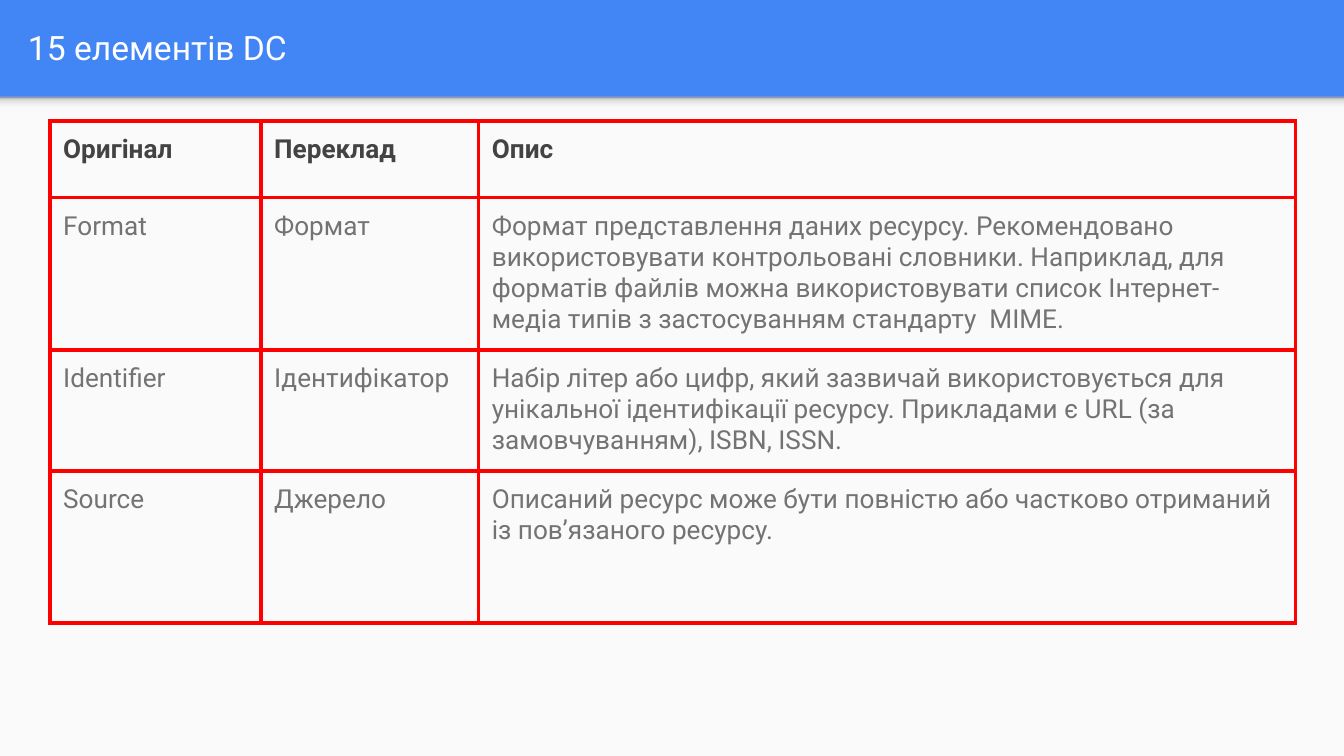
from dataclasses import dataclass

from lxml import etree
from pptx import Presentation
from pptx import util as u
from pptx.dml.color import RGBColor
from pptx.enum import shapes, text
from pptx.oxml import ns


@dataclass(frozen=True)
class Theme:
    font: str = "Roboto"
    title_size: float = 18
    body_size: float = 14
    border_width: float = 2.25
    inset: float = 0.1
    header: str = "4285F4"
    page: str = "FAFAFA"
    title: str = "FFFFFF"
    heading: str = "434343"
    body: str = "737373"
    border: str = "FF0000"
    shade: tuple = ((0, "F9F9F9"), (36, "F9F9F9"), (80, "DEDEDE"), (100, "999999"))


THEME = Theme()
WIDTH = 10
HEIGHT = WIDTH * 9 / 16
HEADER_HEIGHT = 0.72
SHADE_HEIGHT = 0.12
TABLE_LEFT, TABLE_TOP = 0.37, 0.9
COLUMNS = (1.57, 1.62, 6.08)
ROWS = (0.57, 1.1, 0.88, 1.13)

ELEMENTS = (
    ("Оригінал", "Переклад", "Опис"),
    ("Format", "Формат",
     "Формат представлення даних ресурсу. Рекомендовано використовувати "
     "контрольовані словники. Наприклад, для форматів файлів можна "
     "використовувати список Інтернет-медіа типів з застосуванням "
     "стандарту  MIME."),
    ("Identifier", "Ідентифікатор",
     "Набір літер або цифр, який зазвичай використовується для унікальної "
     "ідентифікації ресурсу. Прикладами є URL (за замовчуванням), ISBN, ISSN."),
    ("Source", "Джерело",
     "Описаний ресурс може бути повністю або частково отриманий "
     "із пов’язаного ресурсу."),
)


def inches(*lengths):
    return [u.Inches(length) for length in lengths]


def add_rect(slide, top, height):
    """Add a full-width rectangle without line or shadow."""
    sp = slide.shapes.add_shape(
        shapes.MSO_SHAPE.RECTANGLE, *inches(0, top, WIDTH, height))
    sp.shadow.inherit = False
    sp.line.fill.background()
    return sp


def add_page(slide):
    sp = add_rect(slide, HEADER_HEIGHT, HEIGHT - HEADER_HEIGHT)
    sp.fill.solid()
    sp.fill.fore_color.rgb = RGBColor.from_string(THEME.page)


def add_header_shade(slide):
    """Add the strip that fades downwards from the header's lower edge."""
    sp = add_rect(slide, HEADER_HEIGHT, SHADE_HEIGHT)
    sp.fill.gradient()
    sp.fill.gradient_angle = 90
    stops = next(sp._element.iter(ns.qn("a:gsLst")))
    for stop in list(stops):
        stops.remove(stop)
    for percent, color in THEME.shade:
        stop = etree.SubElement(stops, ns.qn("a:gs"), pos=str(percent * 1000))
        etree.SubElement(stop, ns.qn("a:srgbClr"), val=color)


def set_insets(frame):
    """Give a text frame or a table cell equal margins."""
    for side in ("left", "right", "top", "bottom"):
        setattr(frame, f"margin_{side}", u.Inches(THEME.inset))


def write(tf, words, size, color, bold=False):
    tf.word_wrap = True
    r = tf.paragraphs[0].add_run()
    r.text = words
    r.font.name = THEME.font
    r.font.size = u.Pt(size)
    r.font.bold = bold
    r.font.color.rgb = RGBColor.from_string(color)


def add_title(slide, words):
    tf = slide.shapes.add_textbox(*inches(0.11, 0.02, 9.65, 0.66)).text_frame
    set_insets(tf)
    tf.vertical_anchor = text.MSO_ANCHOR.MIDDLE
    write(tf, words, THEME.title_size, THEME.title)


def set_borders(cell):
    props = cell._tc.get_or_add_tcPr()
    for place, side in enumerate("LRTB"):
        line = etree.Element(
            ns.qn(f"a:ln{side}"), w=str(u.Pt(THEME.border_width)))
        fill = etree.SubElement(line, ns.qn("a:solidFill"))
        etree.SubElement(fill, ns.qn("a:srgbClr"), val=THEME.border)
        props.insert(place, line)


def add_elements_table(slide):
    table = slide.shapes.add_table(
        len(ROWS), len(COLUMNS),
        *inches(TABLE_LEFT, TABLE_TOP, sum(COLUMNS), sum(ROWS))).table
    table.first_row = table.horz_banding = False
    for column, width in zip(table.columns, COLUMNS):
        column.width = u.Inches(width)
    for row, height in zip(table.rows, ROWS):
        row.height = u.Inches(height)
    for i, words_in_row in enumerate(ELEMENTS):
        is_heading = i == 0
        color = THEME.heading if is_heading else THEME.body
        for cell, words in zip(table.rows[i].cells, words_in_row):
            set_insets(cell)
            cell.fill.background()
            set_borders(cell)
            write(cell.text_frame, words, THEME.body_size, color, is_heading)


def main():
    prs = Presentation()
    prs.slide_width, prs.slide_height = inches(WIDTH, HEIGHT)
    slide = prs.slides.add_slide(prs.slide_layouts[6])
    slide.background.fill.solid()
    slide.background.fill.fore_color.rgb = RGBColor.from_string(THEME.header)
    add_page(slide)
    add_header_shade(slide)
    add_title(slide, "15 елементів DC")
    add_elements_table(slide)
    prs.save("out.pptx")


if __name__ == "__main__":
    main()
